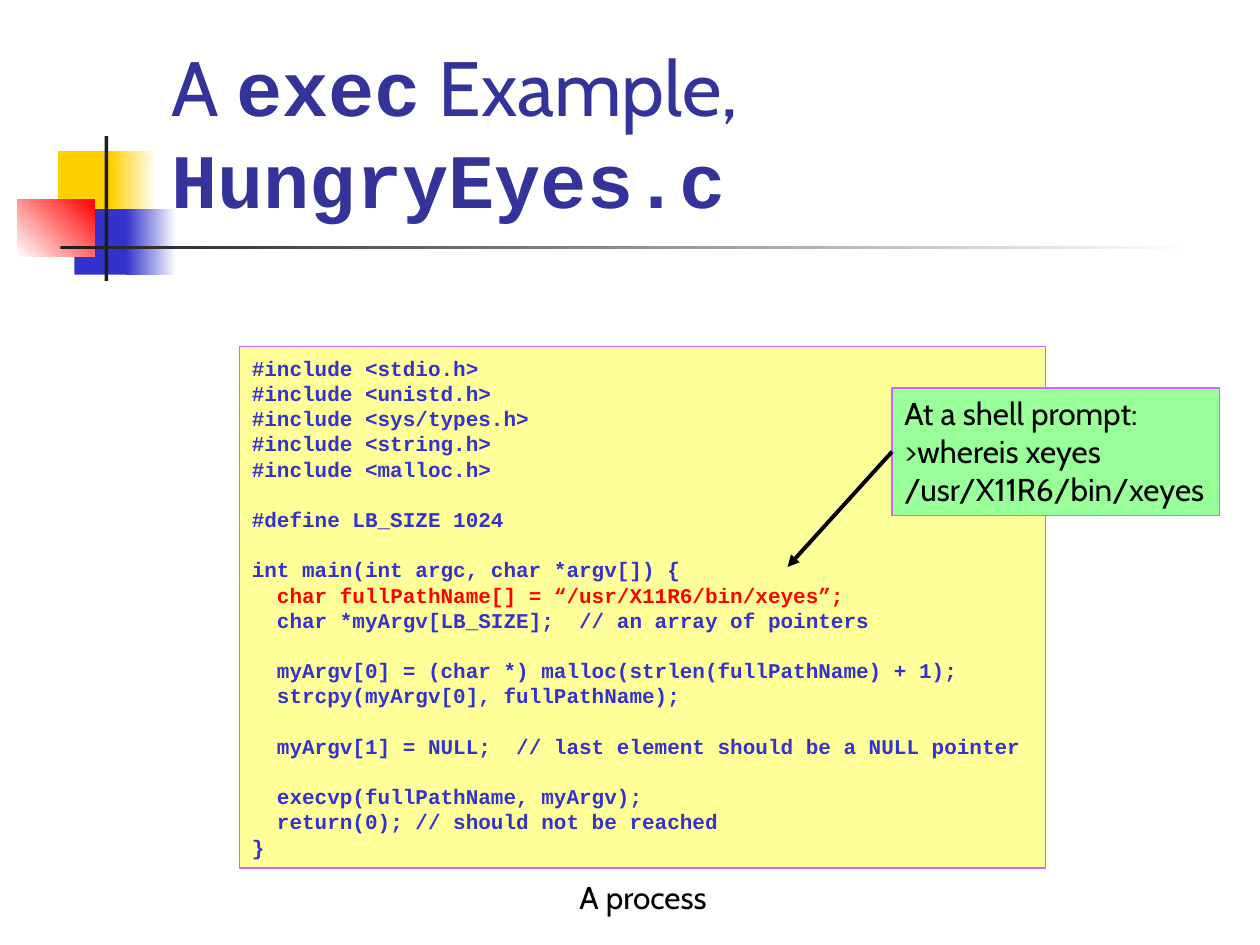
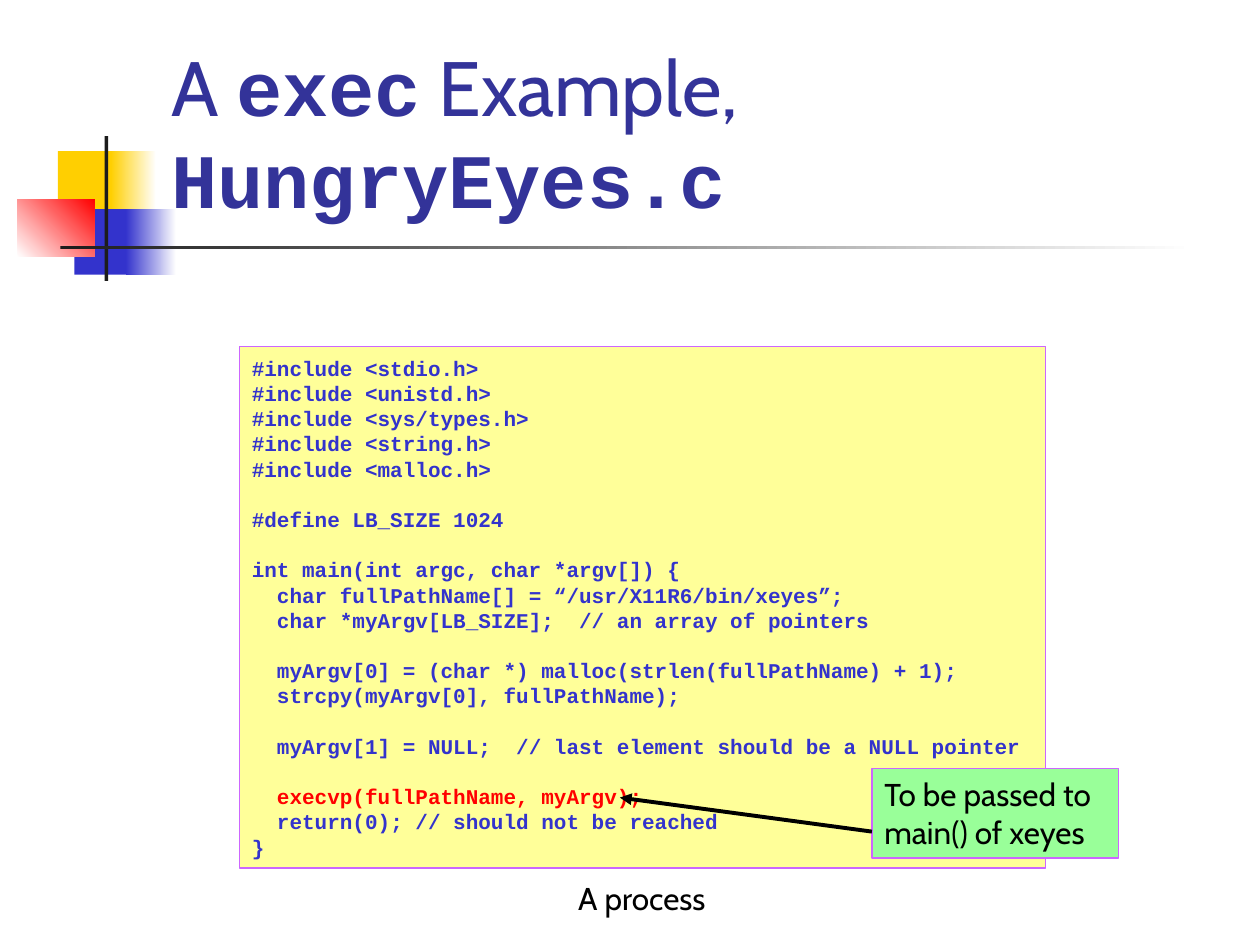
from dataclasses import dataclass

from lxml.etree import SubElement
from pptx import Presentation
from pptx.dml.color import RGBColor
from pptx.enum.shapes import MSO_CONNECTOR, MSO_SHAPE
from pptx.enum.text import MSO_ANCHOR, MSO_AUTO_SIZE, PP_ALIGN
from pptx.oxml.ns import qn
from pptx.util import Emu, Pt

COLORS = {
    "title": "333399", "code": "3333CC", "highlight": "FF0000", "text": "000000",
    "code_fill": "FFFF99", "callout_fill": "99FF99", "outline": "CC66FF",
    "yellow": "FFCF01", "blue": "3333CC", "red": "FF0000", "bar": "1C1C1C", "white": "FFFFFF",
}
BODY_FONT, CODE_FONT = "Cabin", "Courier New"
LINE_PITCH = Pt(14.4)
TITLE_ONLY = 5
LEFT_SIDE = 1


@dataclass(frozen=True)
class Box:
    left: int
    top: int
    width: int
    height: int

    def emu(self) -> tuple[Emu, Emu, Emu, Emu]:
        return px(self.left), px(self.top), px(self.width), px(self.height)


@dataclass(frozen=True)
class Band:
    """A decoration, plain or fading from start to end."""
    box: Box
    start: str
    end: str = ""
    angle: int = 0


@dataclass(frozen=True)
class CodeLine:
    text: str
    indent: int = 0
    gap_before: bool = False


@dataclass(frozen=True)
class Callout:
    box: Box
    lines: tuple[str, ...]
    arrow_start: tuple[int, int]
    arrow_tip: tuple[int, int]
    joined: bool


@dataclass(frozen=True)
class ExampleSlide:
    highlighted: str
    caption_box: Box
    callout: Callout


TITLE_BOX = Box(126, 23, 852, 160)
CODE_BOX = Box(190, 275, 640, 414)

BANDS = (
    Band(Box(46, 120, 48, 52), "yellow"),
    Band(Box(88, 120, 36, 52), "yellow", "white"),
    Band(Box(59, 166, 46, 52), "blue"),
    Band(Box(100, 166, 40, 52), "blue", "white"),
    Band(Box(14, 158, 61, 46), "white", "red", 45),
    Band(Box(83, 108, 3, 115), "bar"),
    Band(Box(48, 195, 900, 3), "bar", "white"),
)

TITLE_RUNS = (
    ("A ", BODY_FONT), ("exec", CODE_FONT),
    (" Example, ", BODY_FONT), ("HungryEyes.c", CODE_FONT),
)

PATH_LINE = "char fullPathName[] = “/usr/X11R6/bin/xeyes”;"
EXEC_LINE = "execvp(fullPathName, myArgv);"
HEADERS = ("stdio.h", "unistd.h", "sys/types.h", "string.h", "malloc.h")
PROGRAM = (
    *(CodeLine(f"#include <{header}>") for header in HEADERS),
    CodeLine("#define LB_SIZE 1024", gap_before=True),
    CodeLine("int main(int argc, char *argv[]) {", gap_before=True),
    CodeLine(PATH_LINE, 1),
    CodeLine("char *myArgv[LB_SIZE];  // an array of pointers", 1),
    CodeLine("myArgv[0] = (char *) malloc(strlen(fullPathName) + 1);", 1, True),
    CodeLine("strcpy(myArgv[0], fullPathName);", 1),
    CodeLine("myArgv[1] = NULL;  // last element should be a NULL pointer", 1, True),
    CodeLine(EXEC_LINE, 1, True),
    CodeLine("return(0); // should not be reached", 1),
    CodeLine("}"),
)

EXAMPLES = (
    ExampleSlide(PATH_LINE, Box(450, 692, 126, 40), Callout(
        Box(708, 308, 260, 101),
        ("At a shell prompt:", ">whereis xeyes", "/usr/X11R6/bin/xeyes"),
        (708, 358), (625, 450), joined=True)),
    ExampleSlide(EXEC_LINE, Box(449, 693, 126, 40), Callout(
        Box(692, 610, 196, 71),
        ("To be passed to", "main() of xeyes"),
        (692, 660), (492, 633), joined=False)),
)


def px(length: int) -> Emu:
    """Convert px, at 100 to the inch, to EMU."""
    return Emu(length * 9144)


def rgb(name: str) -> RGBColor:
    return RGBColor.from_string(COLORS[name])


def set_font(font, name: str, size: int, color: str, bold: bool = False) -> None:
    font.name, font.size, font.bold = name, Pt(size), bold
    font.color.rgb = rgb(color)


def add_rectangle(slide, box: Box):
    rectangle = slide.shapes.add_shape(MSO_SHAPE.RECTANGLE, *box.emu())
    rectangle.shadow.inherit = False
    return rectangle


def add_panel(slide, box: Box, fill: str):
    """Add an outlined rectangle whose text starts at the top left."""
    panel = add_rectangle(slide, box)
    panel.fill.solid()
    panel.fill.fore_color.rgb = rgb(fill)
    panel.line.color.rgb = rgb("outline")
    panel.line.width = Pt(0.75)
    return panel


def write_lines(frame, lines: tuple[str, ...]) -> list:
    """Put one paragraph per line and return the paragraphs."""
    frame.word_wrap = True
    frame.vertical_anchor = MSO_ANCHOR.TOP
    frame.margin_right = 0
    frame.text = "\n".join(lines)
    for paragraph in frame.paragraphs:
        paragraph.alignment = PP_ALIGN.LEFT
        set_font(paragraph.font, BODY_FONT, 18, "text")
    return list(frame.paragraphs)


def add_bands_to_layout(layout, slide) -> None:
    """Draw the bands on a slide and move them to its layout."""
    for band in BANDS:
        shape = add_rectangle(slide, band.box)
        shape.line.fill.background()
        if band.end:
            shape.fill.gradient()
            shape.fill.gradient_angle = band.angle
            for stop, color in zip(shape.fill.gradient_stops, (band.start, band.end)):
                stop.color.rgb = rgb(color)
        else:
            shape.fill.solid()
            shape.fill.fore_color.rgb = rgb(band.start)
        layout.shapes.element.append(shape.element)


def place_title(title) -> None:
    title.left, title.top, title.width, title.height = TITLE_BOX.emu()
    frame = title.text_frame
    frame.auto_size = MSO_AUTO_SIZE.NONE
    frame.word_wrap = True
    frame.vertical_anchor = MSO_ANCHOR.BOTTOM


def write_title(title) -> None:
    paragraph = title.text_frame.paragraphs[0]
    paragraph.alignment = PP_ALIGN.LEFT
    for text, font_name in TITLE_RUNS:
        run = paragraph.add_run()
        run.text = text
        set_font(run.font, font_name, 44, "title", font_name == CODE_FONT)


def add_program(slide, highlighted: str) -> None:
    frame = add_panel(slide, CODE_BOX, "code_fill").text_frame
    frame.margin_top = px(7)
    paragraphs = write_lines(frame, tuple(line.text for line in PROGRAM))
    for paragraph, line in zip(paragraphs, PROGRAM):
        color = "highlight" if line.text == highlighted else "code"
        set_font(paragraph.font, CODE_FONT, 12, color, bold=True)
        paragraph.line_spacing = LINE_PITCH
        if line.gap_before:
            paragraph.space_before = LINE_PITCH
        if line.indent:
            properties = paragraph.runs[0].font  # run colour follows the paragraph
            properties.color.rgb = rgb(color)
            paragraph_xml = paragraph.line_spacing and paragraph.runs[0]._r.getparent()
            paragraph_xml.find(qn("a:pPr")).set("marL", str(px(20 * line.indent)))


def add_callout(slide, callout: Callout) -> None:
    panel = add_panel(slide, callout.box, "callout_fill")
    write_lines(panel.text_frame, callout.lines)

    ends = (*callout.arrow_start, *callout.arrow_tip)
    arrow = slide.shapes.add_connector(MSO_CONNECTOR.STRAIGHT, *map(px, ends))
    if callout.joined:
        arrow.begin_connect(panel, LEFT_SIDE)
    arrow.line.color.rgb = rgb("text")
    arrow.line.width = Pt(2.25)
    SubElement(arrow.line._get_or_add_ln(), qn("a:tailEnd"), type="triangle")
    SubElement(arrow.element.spPr, qn("a:effectLst"))


def main() -> None:
    deck = Presentation()
    deck.slide_width, deck.slide_height = px(1000), px(750)
    layout = deck.slide_layouts[TITLE_ONLY]
    place_title(layout.placeholders[0])

    for number, example in enumerate(EXAMPLES):
        slide = deck.slides.add_slide(layout)
        if number == 0:
            add_bands_to_layout(layout, slide)
        place_title(slide.shapes.title)
        write_title(slide.shapes.title)
        add_program(slide, example.highlighted)
        caption = slide.shapes.add_textbox(*example.caption_box.emu())
        write_lines(caption.text_frame, ("A process",))
        add_callout(slide, example.callout)

    deck.save("out.pptx")


if __name__ == "__main__":
    main()
